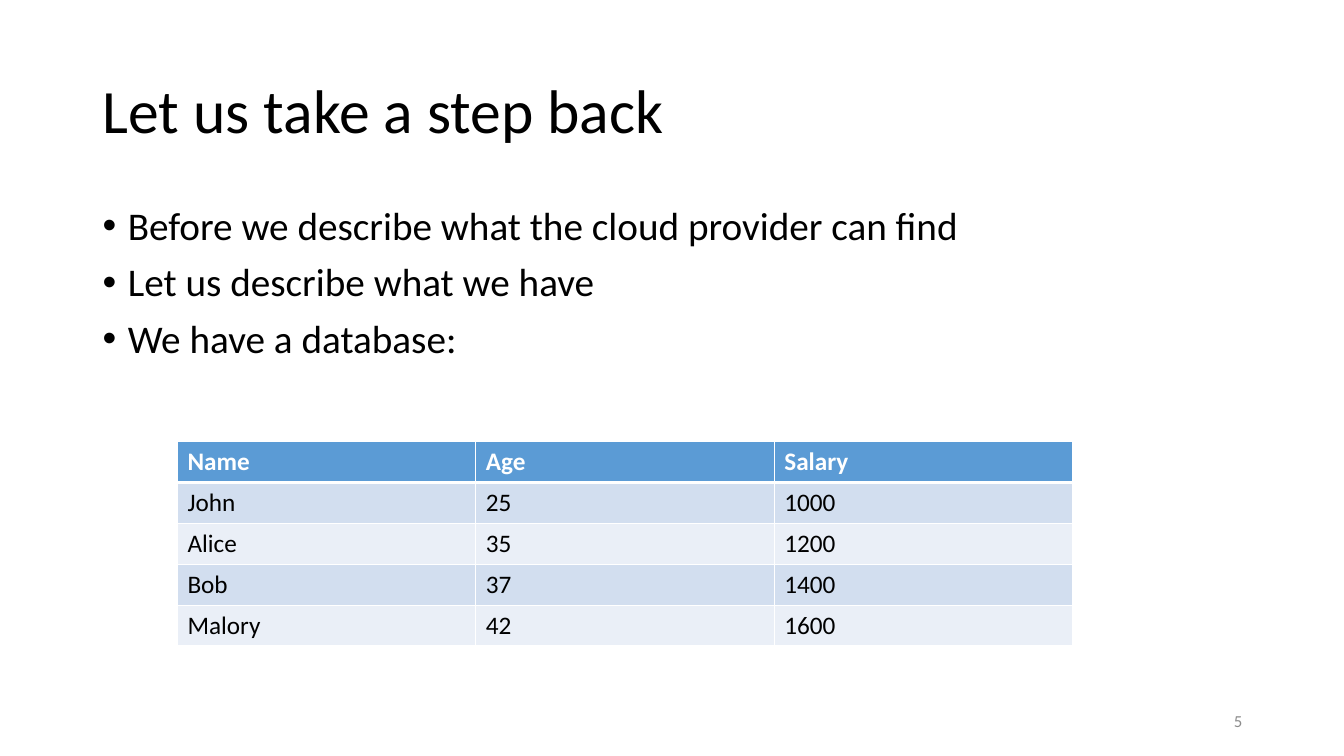
"""Build the slide that introduces the example salary database."""
from dataclasses import dataclass

from lxml.etree import SubElement
from pptx import Presentation
from pptx.dml.color import RGBColor
from pptx.enum.text import MSO_ANCHOR, PP_ALIGN
from pptx.oxml.ns import qn
from pptx.util import Emu, Pt


@dataclass(frozen=True)
class Theme:
    """Font, colours and type sizes of the slide."""
    font: str = "Calibri"
    ink: str = "000000"
    muted: str = "8C8C8C"
    paper: str = "FFFFFF"
    header: str = "5B9BD5"
    bands: tuple = ("D2DEEF", "EAEFF7")
    title_size: int = 44
    body_size: int = 28
    table_size: int = 18
    number_size: int = 12


THEME = Theme()
EMU_PER_PX = 9144
POINTS = (
    "Before we describe what the cloud provider can find",
    "Let us describe what we have",
    "We have a database:",
)
RECORDS = (
    ("Name", "Age", "Salary"),
    ("John", "25", "1000"),
    ("Alice", "35", "1200"),
    ("Bob", "37", "1400"),
    ("Malory", "42", "1600"),
)


def px(length):
    """Turn pixels into EMU."""
    return Emu(length * EMU_PER_PX)


def write(paragraph, words, size, color, bold=False, **layout):
    """Put one formatted run into a paragraph."""
    for name, value in layout.items():
        setattr(paragraph, name, value)
    run = paragraph.add_run()
    run.text = words
    font_format = {"name": THEME.font, "size": Pt(size), "bold": bold}
    for name, value in font_format.items():
        setattr(run.font, name, value)
    run.font.color.rgb = RGBColor.from_string(color)


def add_frame(slide, box, anchor):
    """Add a wrapping text box and return its text frame."""
    frame = slide.shapes.add_textbox(*map(px, box)).text_frame
    frame.word_wrap = True
    frame.vertical_anchor = anchor
    return frame


def add_bullets(slide, box, points):
    """Add a bulleted list with hanging indents."""
    frame = add_frame(slide, box, MSO_ANCHOR.TOP)
    for index, point in enumerate(points):
        paragraph = frame.add_paragraph() if index else frame.paragraphs[0]
        write(paragraph, point, THEME.body_size, THEME.ink,
              line_spacing=0.9, space_before=Pt(10))
        properties = paragraph._p.get_or_add_pPr()
        properties.set("marL", str(px(25)))
        properties.set("indent", str(px(-25)))
        SubElement(properties, qn("a:buFont"), typeface="Arial")
        SubElement(properties, qn("a:buChar"), char="•")


def set_borders(cell, **widths):
    """Draw cell borders with widths in points, keyed by side."""
    properties = cell._tc.get_or_add_tcPr()
    for side, width in widths.items():
        line = SubElement(properties, qn(f"a:ln{side}"), w=str(Pt(width)))
        fill = SubElement(line, qn("a:solidFill"))
        SubElement(fill, qn("a:srgbClr"), val=THEME.paper)


def add_records(slide, box, records):
    """Add the table with a header row and banded records."""
    table = slide.shapes.add_table(
        len(records), len(records[0]), *map(px, box)).table
    for row, record in enumerate(records):
        is_header = row == 0
        fill = THEME.header if is_header else THEME.bands[(row - 1) % 2]
        color = THEME.paper if is_header else THEME.ink
        for column, value in enumerate(record):
            cell = table.cell(row, column)
            set_borders(cell, L=1, R=1, T=3 if row == 1 else 1,
                        B=3 if is_header else 1)
            cell.fill.solid()
            cell.fill.fore_color.rgb = RGBColor.from_string(fill)
            write(cell.text_frame.paragraphs[0], value,
                  THEME.table_size, color, bold=is_header)


def main():
    """Build and save the slide."""
    deck = Presentation()
    deck.slide_width, deck.slide_height = px(1333), px(750)
    slide = deck.slides.add_slide(deck.slide_layouts[6])
    title = add_frame(slide, (92, 40, 1150, 145), MSO_ANCHOR.MIDDLE)
    write(title.paragraphs[0], "Let us take a step back",
          THEME.title_size, THEME.ink, line_spacing=0.9)
    add_bullets(slide, (92, 200, 1150, 476), POINTS)
    number = add_frame(slide, (942, 695, 300, 40), MSO_ANCHOR.MIDDLE)
    write(number.paragraphs[0], "5", THEME.number_size, THEME.muted,
          alignment=PP_ALIGN.RIGHT)
    add_records(slide, (176, 438, 888, 203), RECORDS)
    deck.save("out.pptx")


if __name__ == "__main__":
    main()
